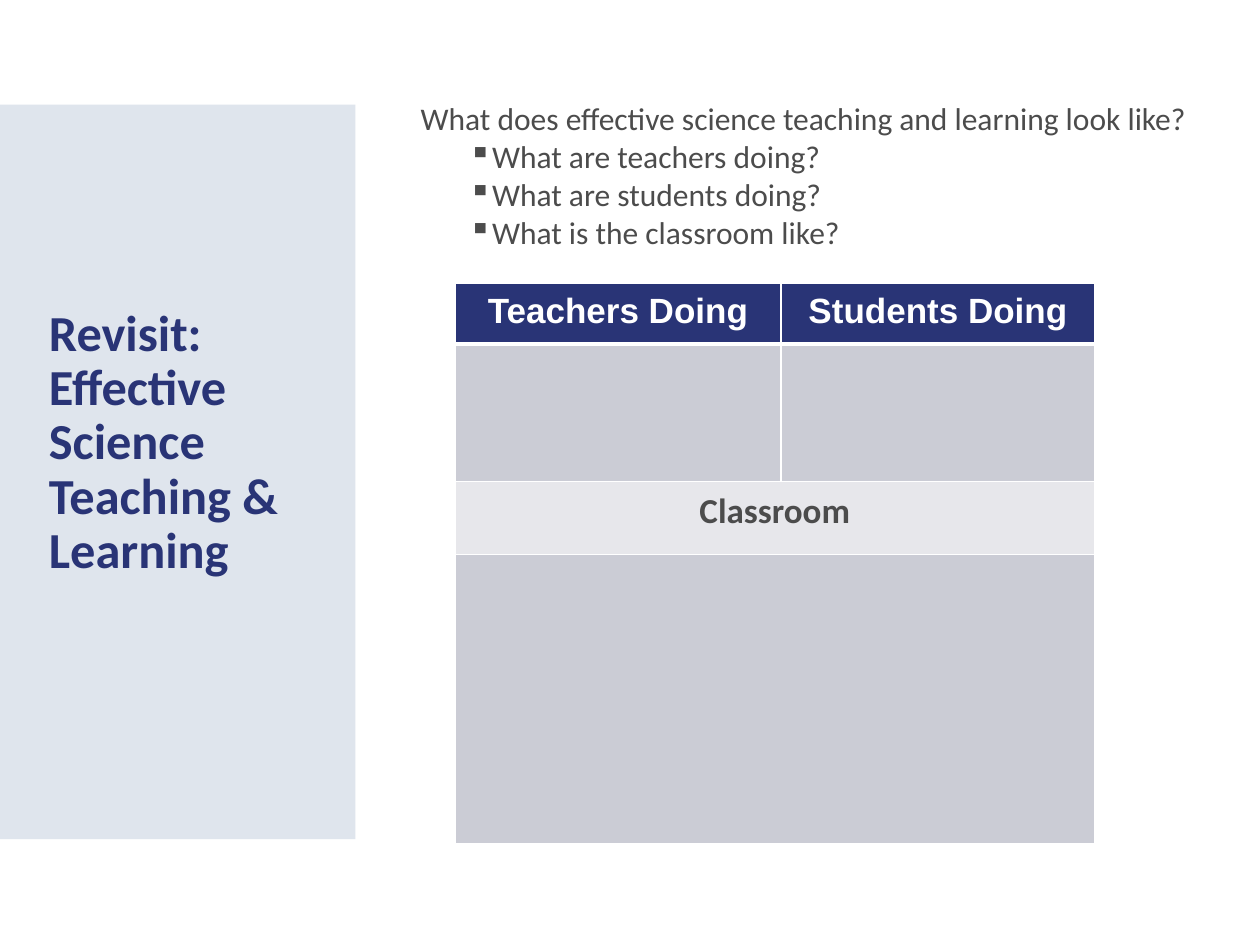
import pptx
import pptx.util
from lxml import etree
from pptx.dml.color import RGBColor
from pptx.enum.shapes import MSO_SHAPE
from pptx.enum.text import MSO_ANCHOR, PP_ALIGN
from pptx.oxml.ns import qn
from pptx.util import Inches

NAVY, GREY, WHITE = "293476", "4C4C4C", "FFFFFF"
PANEL, BAND_DARK, BAND_LIGHT = "DFE5ED", "CBCCD5", "E7E7EB"

TITLE = "Revisit:\nEffective Science Teaching & Learning"
QUESTION = "What does effective science teaching and learning look like?"
PROMPTS = ["What are teachers doing?", "What are students doing?", "What is the classroom like?"]

COLUMN_WIDTHS = [2.59, 2.49]
ROWS = [
    {"height": 0.48, "fill": NAVY, "labels": ["Teachers Doing", "Students Doing"],
     "format": {"font": "Arial", "color": WHITE}, "bottom": 3},
    {"height": 1.09, "fill": BAND_DARK, "labels": ["", ""]},
    {"height": 0.58, "fill": BAND_LIGHT, "labels": ["Classroom"], "format": {"color": GREY}},
    {"height": 2.3, "fill": BAND_DARK, "labels": [""]},
]


def rgb(value):
    return RGBColor.from_string(value)


def write(paragraph, text, size=18, font="Calibri", color=GREY, bold=False,
          align=PP_ALIGN.LEFT, spacing=1.0, bullet=None):
    if bullet:
        properties = paragraph._p.get_or_add_pPr()
        properties.set("lvl", "1")
        properties.set("marL", str(Inches(0.5)))
        properties.set("indent", str(Inches(-0.12)))
        bullet_color = etree.SubElement(properties, qn("a:buClr"))
        etree.SubElement(bullet_color, qn("a:srgbClr"), val=color)
        etree.SubElement(properties, qn("a:buChar"), char=bullet)
    paragraph.text = text
    paragraph.alignment = align
    paragraph.line_spacing = spacing
    for run in paragraph.runs:
        run.font.size = pptx.util.Pt(size)
        run.font.name = font
        run.font.bold = bold
        run.font.color.rgb = rgb(color)


def add_frame(slide, left, top, width, height, anchor=MSO_ANCHOR.TOP):
    frame = slide.shapes.add_textbox(*map(Inches, (left, top, width, height))).text_frame
    frame.word_wrap = True
    frame.vertical_anchor = anchor
    return frame


def set_borders(cell, widths):
    properties = cell._tc.get_or_add_tcPr()
    for side, width in widths.items():
        line = etree.SubElement(properties, qn(f"a:ln{side}"), w=str(pptx.util.Pt(width)))
        fill = etree.SubElement(line, qn("a:solidFill"))
        etree.SubElement(fill, qn("a:srgbClr"), val=WHITE)


def add_observation_table(slide, left, top):
    heights = [row["height"] for row in ROWS]
    table = slide.shapes.add_table(
        len(ROWS), len(COLUMN_WIDTHS), Inches(left), Inches(top),
        Inches(sum(COLUMN_WIDTHS)), Inches(sum(heights))).table
    for column, width in zip(table.columns, COLUMN_WIDTHS):
        column.width = Inches(width)
    above = 1
    for index, row in enumerate(ROWS):
        table.rows[index].height = Inches(row["height"])
        below = row.get("bottom", 1)
        for cell in table.rows[index].cells:
            set_borders(cell, {"L": 1, "R": 1, "T": above, "B": below})
            cell.fill.solid()
            cell.fill.fore_color.rgb = rgb(row["fill"])
            cell.margin_left = cell.margin_right = Inches(0.14)
            cell.margin_top = cell.margin_bottom = Inches(0.07)
        if len(row["labels"]) == 1:
            table.cell(index, 0).merge(table.cell(index, len(COLUMN_WIDTHS) - 1))
        for column, label in enumerate(row["labels"]):
            if label:
                write(table.cell(index, column).text_frame.paragraphs[0], label, size=20,
                      bold=True, align=PP_ALIGN.CENTER, **row["format"])
        above = below


def main():
    deck = pptx.Presentation()
    deck.slide_width, deck.slide_height = Inches(10), Inches(7.5)
    slide = deck.slides.add_slide(deck.slide_layouts[6])

    panel = slide.shapes.add_shape(MSO_SHAPE.RECTANGLE, *map(Inches, (0, 0.83, 2.82, 5.83)))
    panel.shadow.inherit = False
    panel.fill.solid()
    panel.fill.fore_color.rgb = rgb(PANEL)
    panel.line.fill.background()

    title = add_frame(slide, 0.29, 2.25, 2.33, 2.4, MSO_ANCHOR.BOTTOM)
    write(title.paragraphs[0], TITLE, size=28.8, color=NAVY, bold=True, spacing=0.9)

    add_observation_table(slide, 3.61, 2.25)

    questions = add_frame(slide, 3.24, 0.74, 6.35, 1.31)
    write(questions.paragraphs[0], QUESTION)
    for prompt in PROMPTS:
        write(questions.add_paragraph(), prompt, bullet="▪")

    deck.save("out.pptx")


if __name__ == "__main__":
    main()
